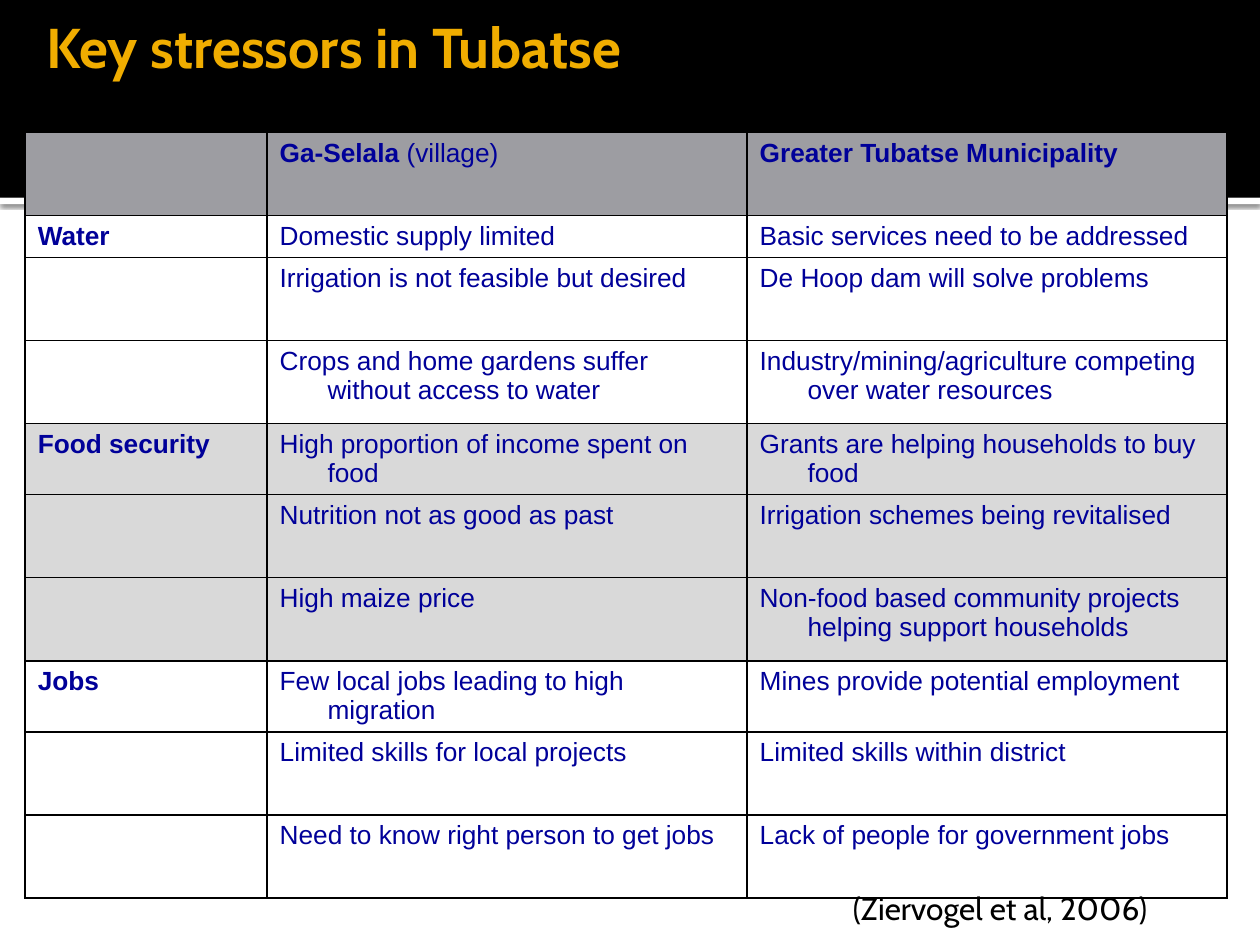
from lxml import etree
from pptx import Presentation
from pptx import util as u
from pptx.dml.color import RGBColor
from pptx.enum import shapes, text
from pptx.oxml import parse_xml
from pptx.oxml.ns import nsdecls, qn

BLACK = RGBColor(0x00, 0x00, 0x00)
WHITE = RGBColor(0xFF, 0xFF, 0xFF)
GOLD = RGBColor(0xF0, 0xAD, 0x00)
NAVY = RGBColor(0x00, 0x00, 0x99)
HEADER_GREY = RGBColor(0x9D, 0x9D, 0xA2)
BAND_GREY = RGBColor(0xD9, 0xD9, 0xD9)

COLUMNS = [1.92, 3.81, 3.81]
ONE_LINE, TWO_LINES, TALL = 0.33, 0.56, 0.66
BANNER = 1.57
ROWS = [
    (TALL, HEADER_GREY, "", "Ga-Selala |(village)", "Greater Tubatse Municipality"),
    (ONE_LINE, WHITE, "Water", "Domestic supply limited", "Basic services need to be addressed"),
    (TALL, WHITE, "", "Irrigation is not feasible but desired", "De Hoop dam will solve problems"),
    (TALL, WHITE, "", "Crops and home gardens suffer without access to water",
     "Industry/mining/agriculture competing over water resources"),
    (TWO_LINES, BAND_GREY, "Food security", "High proportion of income spent on food",
     "Grants are helping households to buy food"),
    (TALL, BAND_GREY, "", "Nutrition not as good as past", "Irrigation schemes being revitalised"),
    (TALL, BAND_GREY, "", "High maize price",
     "Non-food based community projects helping support households"),
    (TWO_LINES, WHITE, "Jobs ", "Few local jobs leading to high migration",
     "Mines provide potential employment"),
    (TALL, WHITE, "", "Limited skills for local projects", "Limited skills within district"),
    (TALL, WHITE, "", "Need to know right person to get jobs", "Lack of people for government jobs"),
]


def style(run, font, size, color, bold=False):
    run.font.name = font
    run.font.size = u.Pt(size)
    run.font.color.rgb = color
    run.font.bold = bold


def add_border(cell, side):
    cell._tc.get_or_add_tcPr().append(parse_xml(
        f'<a:{side} {nsdecls("a")} w="12700"><a:solidFill>'
        f'<a:srgbClr val="{BLACK}"/></a:solidFill></a:{side}>'))


deck = Presentation()
deck.slide_width, deck.slide_height = u.Inches(10), u.Inches(7.5)
slide = deck.slides.add_slide(deck.slide_layouts[5])

for top, height, color in [(BANNER, 0.05, WHITE), (0, BANNER, BLACK)]:
    banner = slide.shapes.add_shape(shapes.MSO_SHAPE.RECTANGLE, 0, u.Inches(top),
                                    deck.slide_width, u.Inches(height))
    banner.fill.solid()
    banner.fill.fore_color.rgb = color
    banner.line.fill.background()
    banner.shadow.inherit = False
    if color == WHITE:
        effects = banner._element.spPr.find(qn("a:effectLst"))
        glow = etree.SubElement(effects, qn("a:outerShdw"), blurRad=str(u.Pt(2.5)),
                                dist=str(u.Pt(0.8)), dir="5400000", rotWithShape="0")
        shade = etree.SubElement(glow, qn("a:srgbClr"), val=str(BLACK))
        etree.SubElement(shade, qn("a:alpha"), val="60000")

title = slide.shapes.title
slide.shapes._spTree.append(title._element)
title.left, title.top = u.Inches(0.27), u.Inches(-0.42)
title.width, title.height = u.Inches(9.17), u.Inches(BANNER)
heading = title.text_frame
heading.text = "Key stressors in Tubatse"
heading.vertical_anchor = text.MSO_ANCHOR.MIDDLE
heading.margin_left = u.Inches(0.1)
heading.margin_top = heading.margin_right = heading.margin_bottom = u.Inches(0.05)
heading.paragraphs[0].alignment = text.PP_ALIGN.LEFT
style(heading.paragraphs[0].runs[0], "Cabin", 32, GOLD, True)

stressors = slide.shapes.add_table(
    len(ROWS), len(COLUMNS), u.Inches(0.2), u.Inches(1.05),
    u.Inches(sum(COLUMNS)), u.Inches(sum(row[0] for row in ROWS))).table
for column, width in zip(stressors.columns, COLUMNS):
    column.width = u.Inches(width)

for r, (height, shade, *entries) in enumerate(ROWS):
    stressors.rows[r].height = u.Inches(height)
    for c, entry in enumerate(entries):
        cell = stressors.cell(r, c)
        for side in ("lnL", "lnR", "lnT", "lnB"):
            add_border(cell, side)
        cell.fill.solid()
        cell.fill.fore_color.rgb = shade
        line = cell.text_frame.paragraphs[0]
        line.alignment = text.PP_ALIGN.LEFT if c else text.PP_ALIGN.JUSTIFY
        indent = line._p.get_or_add_pPr()
        indent.set("marL", str(u.Inches(0.38)))
        indent.set("indent", str(u.Inches(-0.38)))
        if not entry:
            continue
        for part, words in enumerate(entry.split("|")):
            run = line.add_run()
            run.text = words
            style(run, "Arial", 15, NAVY, part == 0 and (r == 0 or c == 0))

citation = slide.shapes.add_textbox(u.Inches(6.67), u.Inches(7.01),
                                    u.Inches(3.06), u.Inches(0.4)).text_frame
citation.word_wrap = True
citation.auto_size = text.MSO_AUTO_SIZE.SHAPE_TO_FIT_TEXT
citation.text = "(Ziervogel et al, 2006)"
style(citation.paragraphs[0].runs[0], "Cabin", 18, BLACK)

deck.save("out.pptx")
